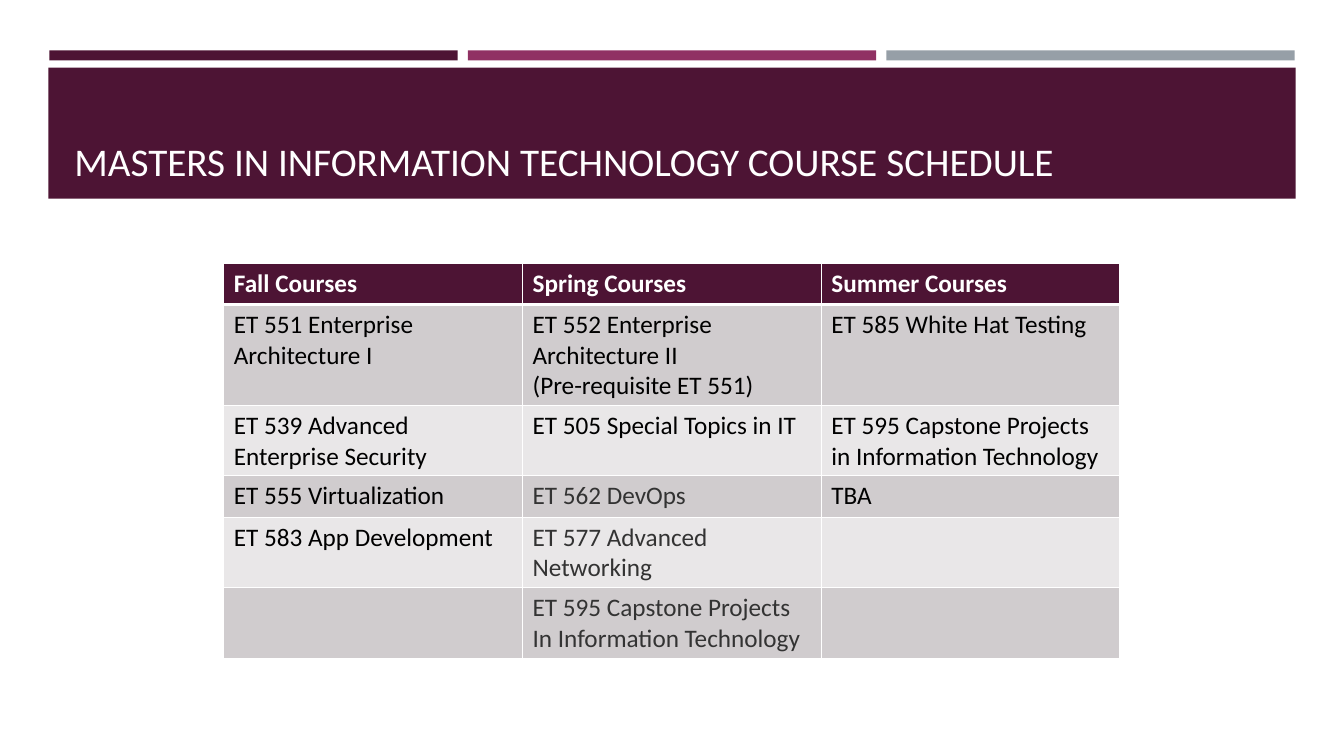
"""Build the course schedule slide."""
from dataclasses import dataclass

from lxml import etree
from pptx import Presentation
from pptx.dml.color import RGBColor
from pptx.enum.shapes import MSO_SHAPE
from pptx.enum.text import MSO_ANCHOR
from pptx.oxml.ns import qn
from pptx.slide import Slide
from pptx.table import _Cell
from pptx.text.text import TextFrame
from pptx.util import Inches, Pt

RECT = MSO_SHAPE.RECTANGLE
BOTTOM = MSO_ANCHOR.BOTTOM
PLUM = RGBColor(0x4D, 0x14, 0x34)
ROSE = RGBColor(0x90, 0x31, 0x63)
STEEL = RGBColor(0x96, 0x9F, 0xA7)
DARK = RGBColor(0xD0, 0xCC, 0xCE)
LIGHT = RGBColor(0xE9, 0xE7, 0xE8)
WHITE = RGBColor(0xFF, 0xFF, 0xFF)
BLACK = RGBColor(0x00, 0x00, 0x00)
GRAY = RGBColor(0x33, 0x33, 0x33)
FONT = "Calibri"
TITLE = "MASTERS IN INFORMATION TECHNOLOGY COURSE SCHEDULE"


@dataclass(frozen=True)
class Bar:
    left: float
    top: float
    width: float
    height: float
    color: RGBColor


@dataclass(frozen=True)
class Entry:
    text: str = ""
    color: RGBColor = BLACK
    bold: bool = False


BARS = [Bar(0.49 + 4.15 * i, 0.5, 4.05, 0.1, color)
        for i, color in enumerate((PLUM, ROSE, STEEL))]
BARS.append(Bar(0.48, 0.67, 12.37, 1.3, PLUM))

ROWS = [
    [Entry(f"{term} Courses", WHITE, True) for term in ("Fall", "Spring", "Summer")],
    [Entry("ET 551 Enterprise Architecture I"),
     Entry("ET 552 Enterprise Architecture II\n(Pre-requisite ET 551)"),
     Entry("ET 585 White Hat Testing")],
    [Entry("ET 539 Advanced Enterprise Security"),
     Entry("ET 505 Special Topics in IT"),
     Entry("ET 595 Capstone Projects in Information Technology")],
    [Entry("ET 555 Virtualization"), Entry("ET 562 DevOps", GRAY), Entry("TBA")],
    [Entry("ET 583 App Development"), Entry("ET 577 Advanced Networking", GRAY), Entry()],
    [Entry(),
     Entry("ET 595 Capstone Projects\nIn Information Technology", GRAY),
     Entry()],
]


def write(frame: TextFrame, entry: Entry, size: int) -> None:
    """Fill a text frame and format its paragraphs."""
    frame.text = entry.text
    for para in frame.paragraphs:
        for font in (para.font, *(run.font for run in para.runs)):
            font.name = FONT
            font.size = Pt(size)
            font.bold = entry.bold
            font.color.rgb = entry.color


def draw_bar(slide: Slide, bar: Bar) -> None:
    """Draw one plain filled bar."""
    box = (bar.left, bar.top, bar.width, bar.height)
    shape = slide.shapes.add_shape(RECT, *map(Inches, box))
    shape.shadow.inherit = False
    shape.fill.solid()
    shape.fill.fore_color.rgb = bar.color
    shape.line.fill.background()


def draw_title(slide: Slide) -> None:
    """Write the title on the wide bar."""
    box = slide.shapes.add_textbox(*map(Inches, (0.64, 0.77, 12.06, 1.11)))
    frame = box.text_frame
    frame.word_wrap = True
    frame.vertical_anchor = BOTTOM
    write(frame, Entry(TITLE, WHITE), 28)


def edge(cell: _Cell, row: int) -> None:
    """Give a cell white borders, thick below the header."""
    props = cell._tc.get_or_add_tcPr()
    thick = {"T": row == 1, "B": row == 0}
    for i, side in enumerate("LRTB"):
        line = etree.Element(qn(f"a:ln{side}"), w=str(Pt(3 if thick.get(side) else 1)))
        fill = etree.SubElement(line, qn("a:solidFill"))
        etree.SubElement(fill, qn("a:srgbClr"), val=str(WHITE))
        props.insert(i, line)


def draw_table(slide: Slide) -> None:
    """Draw the schedule table."""
    high, wide = len(ROWS), len(ROWS[0])
    frame = slide.shapes.add_table(high, wide, Inches(2.22), Inches(2.61),
                                   Inches(8.89), Inches(0.41 * high))
    table = frame.table
    for r, row in enumerate(ROWS):
        for c, entry in enumerate(row):
            cell = table.cell(r, c)
            cell.fill.solid()
            cell.fill.fore_color.rgb = PLUM if r == 0 else DARK if r % 2 else LIGHT
            write(cell.text_frame, entry, 18)
            edge(cell, r)


def main() -> None:
    """Build and save the deck."""
    deck = Presentation()
    deck.slide_width = Inches(13.33)
    deck.slide_height = Inches(7.5)
    slide = deck.slides.add_slide(deck.slide_layouts[6])
    for bar in BARS:
        draw_bar(slide, bar)
    draw_title(slide)
    draw_table(slide)
    deck.save("out.pptx")


if __name__ == "__main__":
    main()
